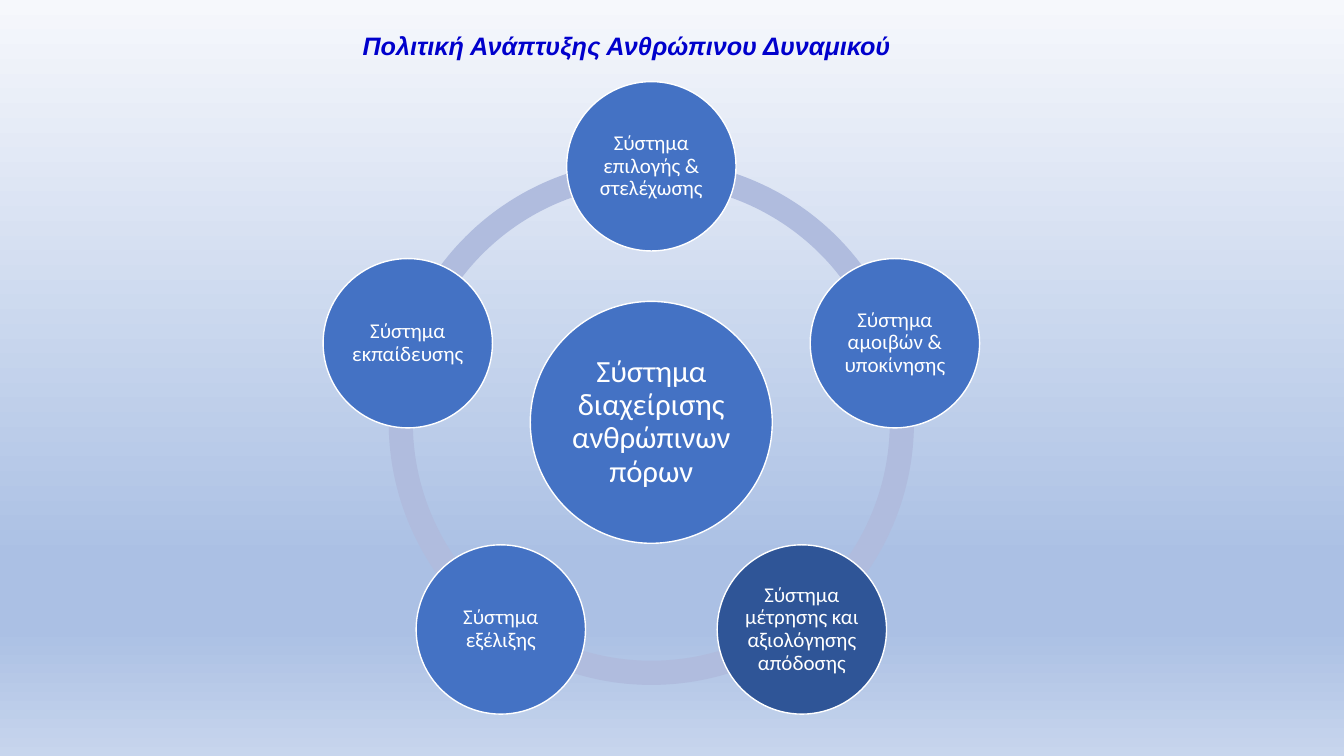
import math

from lxml import etree
from pptx import Presentation
from pptx import util as u
from pptx.dml.color import RGBColor
from pptx.enum import shapes, text
from pptx.oxml import ns

BLUE = RGBColor(0x44, 0x72, 0xC4)
DARK_BLUE = RGBColor(0x2F, 0x55, 0x97)
RING_BLUE = RGBColor(0xB0, 0xBC, 0xDE)
TITLE_BLUE = RGBColor(0x00, 0x00, 0xCC)
WHITE = RGBColor(0xFF, 0xFF, 0xFF)
BACKGROUND_STOPS = [(0, "F6F8FC"), (74, "ABC0E4"), (83, "ABC0E4"), (100, "C7D5ED")]

CENTER_X, CENTER_Y = 6.46, 4.19
RING_SIZE, HUB_SIZE, SYSTEM_SIZE = 5.21, 2.4, 1.68
ORBIT = 2.54

SYSTEMS = [
    ("Σύστημα επιλογής & στελέχωσης", BLUE),
    ("Σύστημα αμοιβών & υποκίνησης", BLUE),
    ("Σύστημα μέτρησης και αξιολόγησης απόδοσης", DARK_BLUE),
    ("Σύστημα εξέλιξης", BLUE),
    ("Σύστημα εκπαίδευσης", BLUE),
]
STEP = 360 / len(SYSTEMS)


def add_round(kind, x, y, size, color):
    """Add a filled square-framed shape centred on x, y."""
    shape = diagram.shapes.add_shape(
        kind, u.Inches(x - size / 2), u.Inches(y - size / 2), u.Inches(size), u.Inches(size))
    shape.shadow.inherit = False
    shape.fill.solid()
    shape.fill.fore_color.rgb = color
    shape.line.fill.background()
    return shape


def add_circle(label, x, y, size, color, points, inset):
    """Add a white-edged circle with a centred label."""
    circle = add_round(shapes.MSO_SHAPE.OVAL, x, y, size, color)
    circle.line.color.rgb = WHITE
    circle.line.width = u.Pt(1)
    frame = circle.text_frame
    frame.text = label
    frame.word_wrap = True
    frame.vertical_anchor = text.MSO_ANCHOR.MIDDLE
    frame.margin_left = frame.margin_right = u.Inches(inset)
    frame.margin_top = frame.margin_bottom = u.Inches(inset)
    paragraph = frame.paragraphs[0]
    paragraph.alignment = text.PP_ALIGN.CENTER
    paragraph.line_spacing = 0.9
    font = paragraph.runs[0].font
    font.name, font.size, font.color.rgb = "Calibri", u.Pt(points), WHITE


prs = Presentation()
prs.slide_width, prs.slide_height = u.Inches(13.33), u.Inches(7.5)
slide = prs.slides.add_slide(prs.slide_layouts[6])

# Background gradient, top to bottom
background = slide.background.fill
background.gradient()
background.gradient_angle = 270
stop_list = next(slide.element.iter(ns.qn("a:gsLst")))
for stop in list(stop_list):
    stop_list.remove(stop)
for percent, color in BACKGROUND_STOPS:
    stop = etree.SubElement(stop_list, ns.qn("a:gs"), pos=str(percent * 1000))
    etree.SubElement(stop, ns.qn("a:srgbClr"), val=color)

# Title
title = slide.shapes.add_textbox(
    u.Inches(1.94), u.Inches(0.13), u.Inches(8.62), u.Inches(0.68)).text_frame
title.text = "Πολιτική Ανάπτυξης Ανθρώπινου Δυναμικού "
title.word_wrap = True
title.vertical_anchor = text.MSO_ANCHOR.MIDDLE
heading = title.paragraphs[0]
heading.alignment = text.PP_ALIGN.CENTER
heading.line_spacing = 0.9
heading_font = heading.runs[0].font
heading_font.name, heading_font.size = "Arial", u.Pt(18)
heading_font.bold = heading_font.italic = True
heading_font.color.rgb = TITLE_BLUE

# Ring of arcs, each running from one system to the next
diagram = slide.shapes.add_group_shape()
angles = [(270 + i * STEP) % 360 for i in range(len(SYSTEMS))]
for angle in angles:
    arc = add_round(shapes.MSO_SHAPE.BLOCK_ARC, CENTER_X, CENTER_Y, RING_SIZE, RING_BLUE)
    # Angles are stored in 1/60000 degree, adjustments in 1/100000
    arc.adjustments[0] = angle * 0.6
    arc.adjustments[1] = (angle + STEP) % 360 * 0.6
    arc.adjustments[2] = 0.046

# Hub and the systems around it
add_circle("Σύστημα διαχείρισης ανθρώπινων πόρων",
           CENTER_X, CENTER_Y, HUB_SIZE, BLUE, 22, 0.03)
for (label, color), angle in zip(SYSTEMS, angles):
    x = CENTER_X + ORBIT * math.cos(math.radians(angle))
    y = CENTER_Y + ORBIT * math.sin(math.radians(angle))
    add_circle(label, x, y, SYSTEM_SIZE, color, 15, 0.02)

prs.save("out.pptx")
